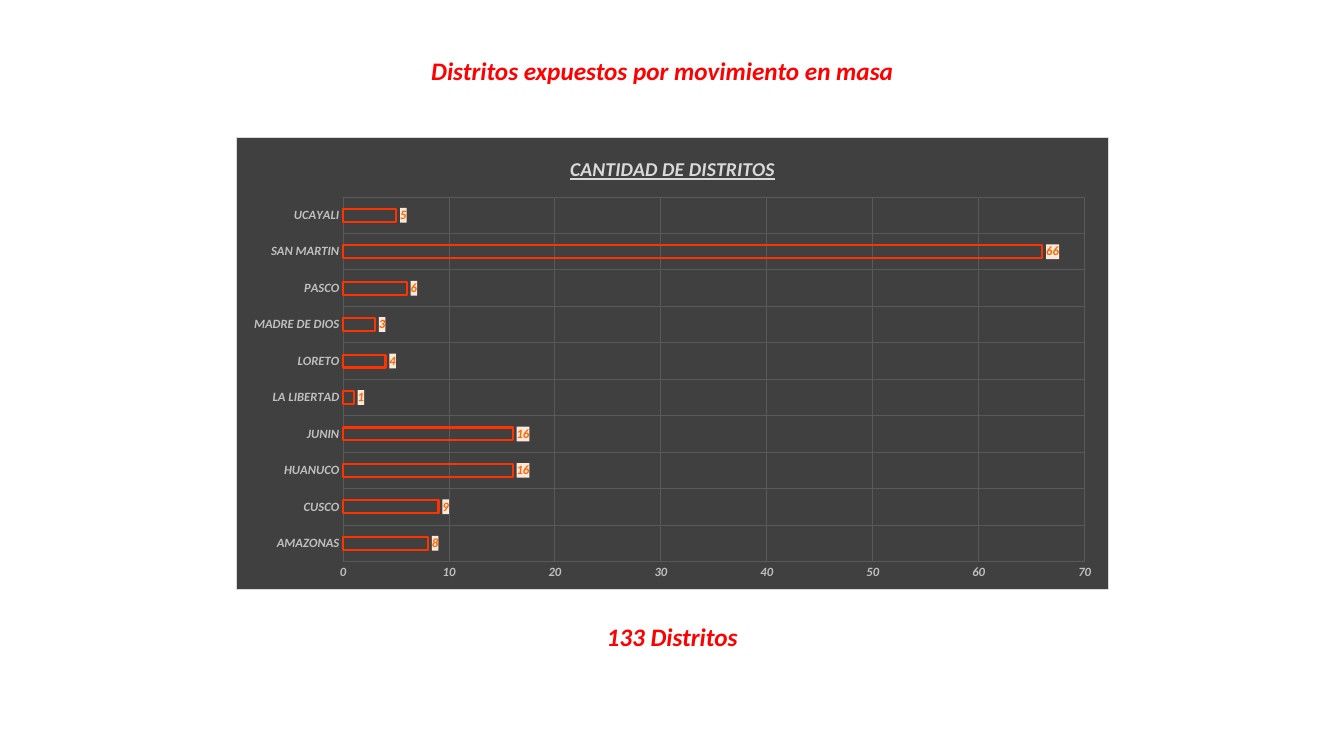
from lxml import etree
from pptx import Presentation
from pptx.chart.data import CategoryChartData
from pptx.dml.color import RGBColor
from pptx.enum.chart import XL_CHART_TYPE, XL_LABEL_POSITION, XL_TICK_MARK
from pptx.enum.text import MSO_ANCHOR, PP_ALIGN
from pptx.oxml import parse_xml
from pptx.util import Cm, Pt

BAR_CLUSTERED = XL_CHART_TYPE.BAR_CLUSTERED
OUTSIDE_END = XL_LABEL_POSITION.OUTSIDE_END
NO_TICK = XL_TICK_MARK.NONE
MIDDLE = MSO_ANCHOR.MIDDLE
CENTER = PP_ALIGN.CENTER

RED = RGBColor(0xFF, 0x00, 0x00)
BAR_RED = RGBColor(0xFF, 0x33, 0x00)
ORANGE = RGBColor(0xFF, 0x66, 0x00)
LABEL_FILL = RGBColor(0xFD, 0xE9, 0xDC)
CHARCOAL = RGBColor(0x40, 0x40, 0x40)
GRID_GRAY = RGBColor(0x59, 0x59, 0x59)
AXIS_GRAY = RGBColor(0xBF, 0xBF, 0xBF)
LIGHT_GRAY = RGBColor(0xD9, 0xD9, 0xD9)

FONT = "Calibri"
CHART_NS = "http://schemas.openxmlformats.org/drawingml/2006/chart"
DRAWING_NS = "http://schemas.openxmlformats.org/drawingml/2006/main"
DISTRICTS = {
    "AMAZONAS": 8, "CUSCO": 9, "HUANUCO": 16, "JUNIN": 16, "LA LIBERTAD": 1,
    "LORETO": 4, "MADRE DE DIOS": 3, "PASCO": 6, "SAN MARTIN": 66, "UCAYALI": 5,
}


def style_font(font, size, color):
    """Apply the bold italic lettering shared by all text."""
    font.name = FONT
    font.size = Pt(size)
    font.bold = font.italic = True
    font.color.rgb = color


def fill_before_text(parent, fill, border=None):
    """Insert a filled shape style ahead of the text style of a chart part."""
    style = parse_xml(f'<c:spPr xmlns:c="{CHART_NS}" xmlns:a="{DRAWING_NS}"/>')
    solid = etree.SubElement(style, f"{{{DRAWING_NS}}}solidFill")
    etree.SubElement(solid, f"{{{DRAWING_NS}}}srgbClr", val=str(fill))
    line = etree.SubElement(style, f"{{{DRAWING_NS}}}ln", w=str(Pt(0.75)))
    if border is None:
        etree.SubElement(line, f"{{{DRAWING_NS}}}noFill")
    else:
        stroke = etree.SubElement(line, f"{{{DRAWING_NS}}}solidFill")
        etree.SubElement(stroke, f"{{{DRAWING_NS}}}srgbClr", val=str(border))
    parent.find(f"{{{CHART_NS}}}txPr").addprevious(style)


def write_heading(shape, box, text):
    """Place one centred red line of text in the given box."""
    shape.left, shape.top, shape.width, shape.height = box
    frame = shape.text_frame
    frame.text = text
    frame.word_wrap = False
    frame.vertical_anchor = MIDDLE
    para = frame.paragraphs[0]
    para.alignment = CENTER
    style_font(para.font, 18, RED)


def style_axis(axis):
    """Format an axis with gray labels and thin gridlines."""
    axis.major_tick_mark = axis.minor_tick_mark = NO_TICK
    axis.format.line.fill.background()
    axis.has_major_gridlines = True
    grid = axis.major_gridlines.format.line
    grid.color.rgb = GRID_GRAY
    grid.width = Pt(0.75)
    style_font(axis.tick_labels.font, 9, AXIS_GRAY)


def style_bars(plot):
    """Outline the bars and label them with their values."""
    plot.gap_width = 182
    plot.overlap = -50
    plot.vary_by_categories = False
    bars = plot.series[0]
    bars.invert_if_negative = False
    bars.format.fill.background()
    bars.format.line.color.rgb = BAR_RED
    bars.format.line.width = Pt(1.5)
    labels = bars.data_labels
    labels.show_value = True
    labels.position = OUTSIDE_END
    labels.number_format = "#,##0"
    labels.number_format_is_linked = False
    style_font(labels.font, 9, ORANGE)
    fill_before_text(labels._element, LABEL_FILL)


def add_district_chart(slide, box):
    """Add the dark bar chart of districts per region."""
    data = CategoryChartData(number_format="#,##0")
    data.categories = list(DISTRICTS)
    data.add_series("Series 1", list(DISTRICTS.values()))
    chart = slide.shapes.add_chart(BAR_CLUSTERED, *box, data).chart
    chart.font.name = FONT
    chart.font.size = Pt(10)
    chart.has_legend = False
    fill_before_text(chart._chartSpace, CHARCOAL, LIGHT_GRAY)
    chart.has_title = True
    chart.chart_title.include_in_layout = False
    title = chart.chart_title.text_frame
    title.text = "CANTIDAD DE DISTRITOS"
    title_font = title.paragraphs[0].font
    style_font(title_font, 14, LIGHT_GRAY)
    title_font.underline = True
    for axis in (chart.category_axis, chart.value_axis):
        style_axis(axis)
    chart.value_axis.minimum_scale = 0
    chart.value_axis.maximum_scale = 70
    chart.value_axis.major_unit = 10
    style_bars(chart.plots[0])


def build_district_slide(deck):
    """Build the slide with heading, chart and total."""
    slide = deck.slides.add_slide(deck.slide_layouts[5])
    heading_box = Cm(10.54), Cm(1.27), Cm(12.3), Cm(1.03)
    write_heading(slide.shapes.title, heading_box,
                  "Distritos expuestos por movimiento en masa")
    add_district_chart(slide, (Cm(5.95), Cm(3.46), Cm(22), Cm(11.4)))
    total_box = Cm(14.82), Cm(15.52), Cm(4.24), Cm(1.03)
    total = slide.shapes.add_textbox(*total_box)
    write_heading(total, total_box, "133 Distritos")


def main():
    """Create and save the deck."""
    deck = Presentation()
    deck.slide_width, deck.slide_height = Cm(33.87), Cm(19.05)
    build_district_slide(deck)
    deck.save("out.pptx")


if __name__ == "__main__":
    main()
